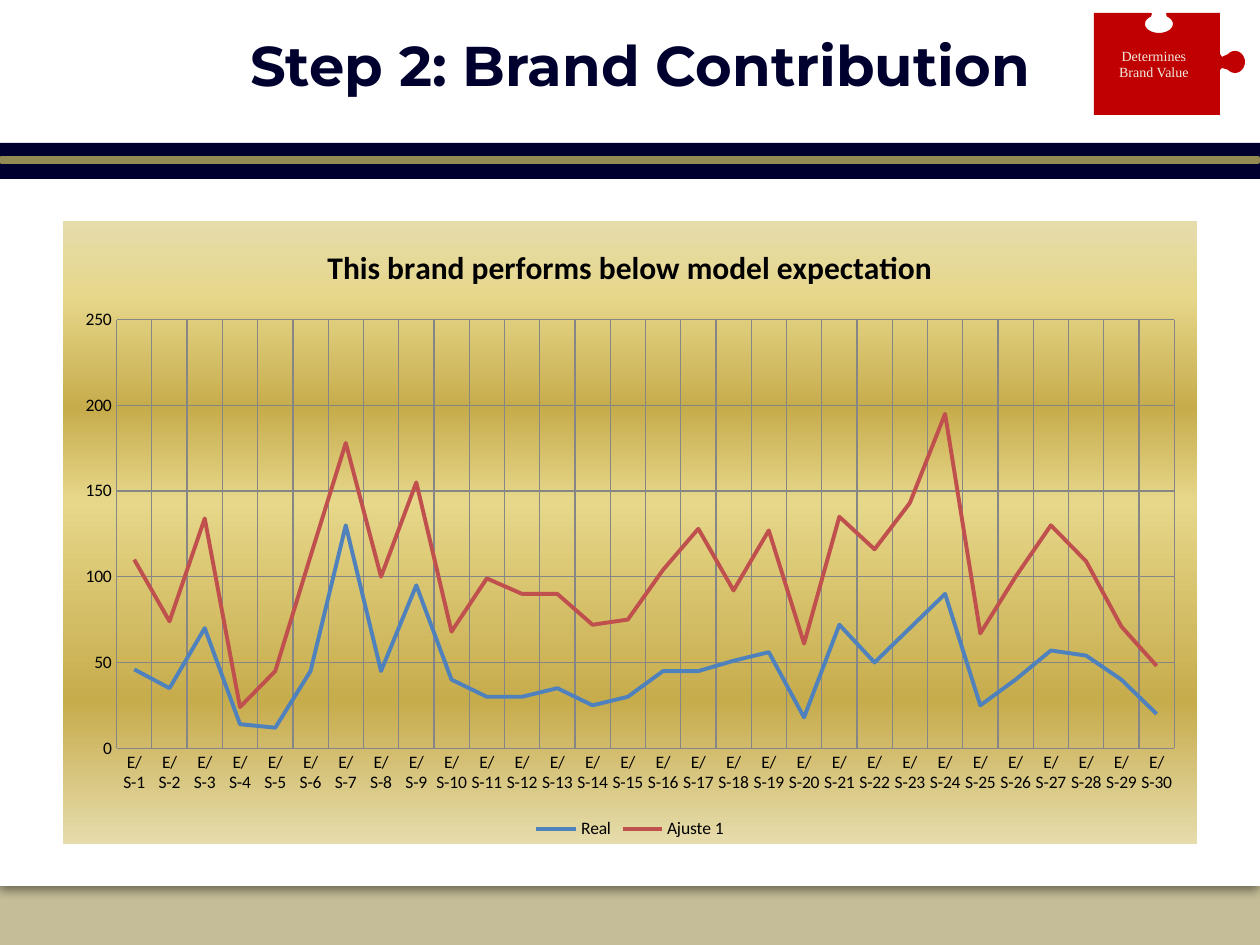
from math import cos, radians, sin

from lxml.etree import SubElement
from pptx import Presentation
from pptx.chart.data import CategoryChartData
from pptx.dml.color import RGBColor
from pptx.enum.chart import XL_CHART_TYPE, XL_LEGEND_POSITION, XL_TICK_MARK
from pptx.enum.shapes import MSO_SHAPE
from pptx.enum.text import MSO_ANCHOR, PP_ALIGN
from pptx.oxml import parse_xml
from pptx.oxml.ns import nsdecls, qn
from pptx.util import Pt

PX = 914400 / 126
NAVY, GOLD, RED = "00002E", "948A54", "C00000"
color = RGBColor.from_string


def style(target, values):
    """Set attributes from a dict; "color" takes a hex string."""
    for name, value in values.items():
        if name == "color":
            target.color.rgb = color(value)
        else:
            setattr(target, name, value)


def arc(center_x, center_y, radius_x, radius_y, start, end, steps=24):
    """Points on an ellipse, angles in degrees measured clockwise from the right."""
    angles = [radians(start + (end - start) * i / steps) for i in range(steps + 1)]
    return [(center_x + radius_x * cos(a), center_y + radius_y * sin(a)) for a in angles]


presentation = Presentation()
presentation.slide_width = round(1260 * PX)
presentation.slide_height = round(945 * PX)
slide = presentation.slides.add_slide(presentation.slide_layouts[5])
slide.background.fill.solid()
slide.background.fill.fore_color.rgb = color("C4BD97")

# White page, navy band and gold stripe
bars = []
for left, top, width, height, fill in [
    (0, 0, 1260, 886, "FFFFFF"),
    (0, 143, 1260, 36, NAVY),
    (1, 158, 1257, 4, GOLD),
]:
    bar = slide.shapes.add_shape(
        MSO_SHAPE.RECTANGLE, *(round(n * PX) for n in (left, top, width, height)))
    bar.shadow.inherit = False
    bar.fill.solid()
    bar.fill.fore_color.rgb = color(fill)
    bar.line.fill.background()
    bars.append(bar)
page, band, stripe = bars
style(stripe.line, {"color": GOLD, "width": Pt(2)})
effects = page.element.spPr.find(qn("a:effectLst"))
effects.append(parse_xml(
    f'<a:outerShdw {nsdecls("a")} blurRad="63500" dist="25400" dir="5400000" rotWithShape="0">'
    '<a:srgbClr val="000000"><a:alpha val="43000"/></a:srgbClr></a:outerShdw>'))

# Title
title = slide.shapes.title
style(title, {"left": round(189 * PX), "top": round(15 * PX),
              "width": round(903 * PX), "height": round(98 * PX)})
title.element.getparent().append(title.element)
title.text_frame.vertical_anchor = MSO_ANCHOR.MIDDLE
paragraph = title.text_frame.paragraphs[0]
paragraph.alignment = PP_ALIGN.CENTER
run = paragraph.add_run()
run.text = "Step 2: Brand Contribution"
style(run.font, {"name": "Montserrat", "size": Pt(32), "bold": True, "color": NAVY})
run.font.fill._xPr.insert(0, parse_xml(
    f'<a:ln {nsdecls("a")} w="6604"><a:solidFill><a:srgbClr val="{GOLD}"/></a:solidFill></a:ln>'))

# Chart
series_data = {
    "Real": ("4F81BD", [46, 35, 70, 14, 12, 45, 130, 45, 95, 40, 30, 30, 35, 25, 30,
                        45, 45, 51, 56, 18, 72, 50, 70, 90, 25, 40, 57, 54, 40, 20]),
    "Ajuste 1": ("C0504D", [64, 39, 64, 10, 33, 67, 48, 55, 60, 28, 69, 60, 55, 47, 45,
                            59, 83, 41, 71, 43, 63, 66, 73, 105, 42, 60, 73, 55, 31, 28]),
}
chart_data = CategoryChartData()
chart_data.categories = [f"E/S-{number}" for number in range(1, 31)]
for name, (_, values) in series_data.items():
    chart_data.add_series(name, values)
chart = slide.shapes.add_chart(
    XL_CHART_TYPE.LINE_STACKED, *(round(n * PX) for n in (63, 221, 1134, 623)), chart_data).chart
style(chart.font, {"name": "Calibri", "size": Pt(10), "color": "000000"})
chart.has_title = True
chart.chart_title.include_in_layout = False
chart.chart_title.text_frame.text = "This brand performs below model expectation"
style(chart.chart_title.text_frame.paragraphs[0].runs[0].font,
      {"name": "Calibri", "size": Pt(18), "bold": True, "color": "000000"})
chart.has_legend = True
style(chart.legend, {"position": XL_LEGEND_POSITION.BOTTOM, "include_in_layout": False})
for axis in (chart.category_axis, chart.value_axis):
    style(axis, {"has_major_gridlines": True, "major_tick_mark": XL_TICK_MARK.NONE,
                 "minor_tick_mark": XL_TICK_MARK.NONE})
    for line in (axis.major_gridlines.format.line, axis.format.line):
        style(line, {"color": "868686", "width": Pt(0.75)})
style(chart.value_axis, {"minimum_scale": 0, "maximum_scale": 250, "major_unit": 50})
chart.value_axis.format.line.fill.background()
for series in chart.plots[0].series:
    series.smooth = False
    style(series.format.line, {"color": series_data[series.name][0], "width": Pt(2.25)})

# Gold gradient behind the chart
chart_fill = parse_xml(
    f'<c:spPr {nsdecls("c", "a")}><a:gradFill><a:gsLst/><a:lin ang="5400000" scaled="0"/>'
    '</a:gradFill><a:ln><a:noFill/></a:ln></c:spPr>')
stops = chart_fill.find(".//" + qn("a:gsLst"))
for position, stop_color in [(0, "E6DCAC"), (12, "E6D78A"), (30, "C7AC4C"),
                             (45, "E6D78A"), (77, "C7AC4C"), (100, "E6DCAC")]:
    stop = SubElement(stops, qn("a:gs"), pos=str(position * 1000))
    SubElement(stop, qn("a:srgbClr"), val=stop_color)
chart.element.find(qn("c:chart")).addnext(chart_fill)

# Puzzle piece: socket in the top side, knob on the right side
outline = [
    (1094, 13), (1151, 13), (1152, 14),
    *arc(1159, 24, 14, 9, 235, -55),
    (1166, 14), (1167, 13), (1220, 13), (1220, 54), (1222, 57),
    *arc(1235, 62, 10, 11, -135, 135),
    (1222, 68), (1220, 70), (1220, 115), (1094, 115),
]
points = [(round(x * PX), round(y * PX)) for x, y in outline]
builder = slide.shapes.build_freeform(*points[0], scale=1.0)
builder.add_line_segments(points[1:], close=True)
piece = builder.convert_to_shape()
piece.shadow.inherit = False
piece.fill.solid()
piece.fill.fore_color.rgb = color(RED)
piece.line.fill.background()
style(piece.text_frame, {
    "word_wrap": True, "vertical_anchor": MSO_ANCHOR.MIDDLE,
    "margin_left": round(13 * PX), "margin_right": round(44 * PX),
    "margin_top": round(6 * PX), "margin_bottom": round(6 * PX)})
piece.text_frame.text = "Determines\nBrand Value"
for paragraph in piece.text_frame.paragraphs:
    paragraph.alignment = PP_ALIGN.CENTER
    style(paragraph.runs[0].font, {"name": "Times New Roman", "size": Pt(8), "color": "EEECE1"})

presentation.save("out.pptx")
